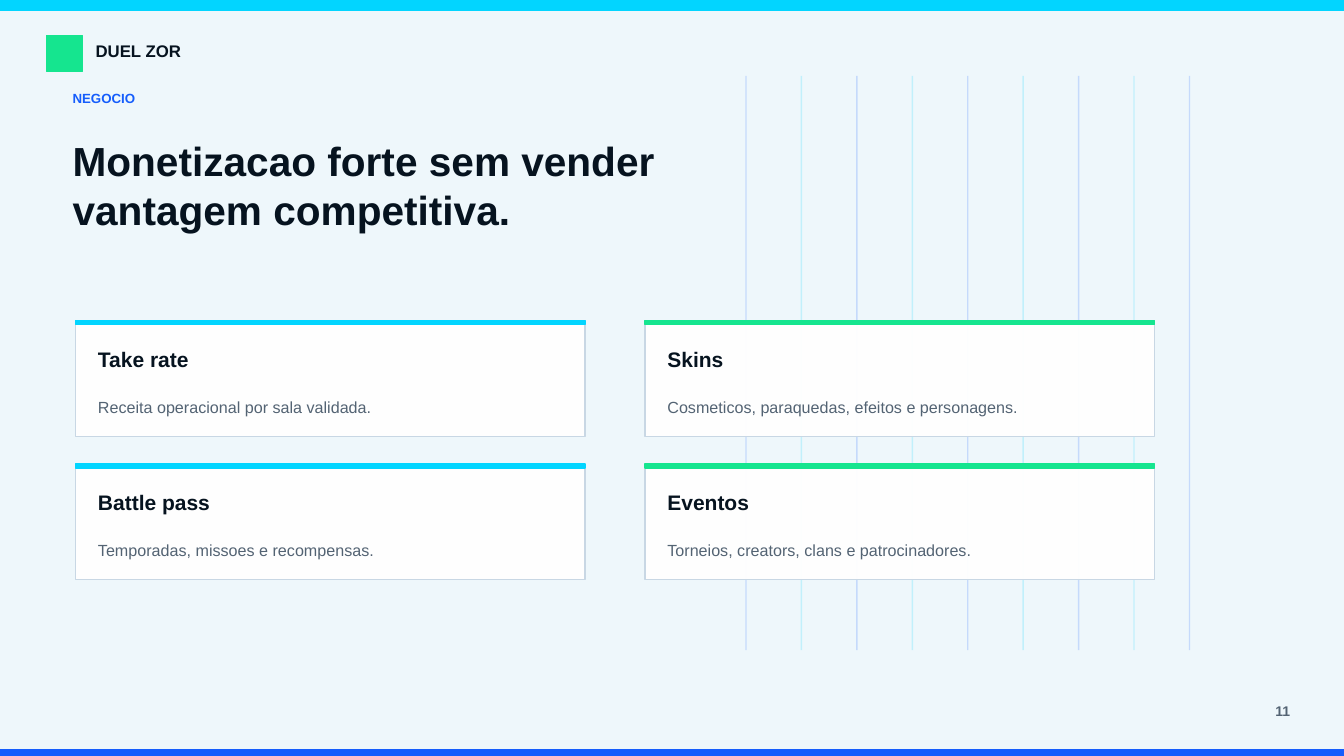
from lxml import etree
from pptx import Presentation
from pptx.dml.color import RGBColor
from pptx.enum.shapes import MSO_CONNECTOR, MSO_SHAPE
from pptx.enum.text import MSO_ANCHOR, PP_ALIGN
from pptx.oxml.ns import qn
from pptx.util import Cm, Pt

RECT = MSO_SHAPE.RECTANGLE
LINE = MSO_CONNECTOR.STRAIGHT
MIDDLE = MSO_ANCHOR.MIDDLE
LEFT, RIGHT = PP_ALIGN.LEFT, PP_ALIGN.RIGHT

COLORS = {
    "paper": "EEF7FB", "cyan": "02D5FF", "blue": "155DFC", "green": "15E58F",
    "ink": "06131F", "gray": "536373", "white": "FFFFFF", "edge": "C8D7E4",
}
COLORS = {name: RGBColor.from_string(code) for name, code in COLORS.items()}

deck = Presentation()
deck.slide_width, deck.slide_height = Cm(33.87), Cm(19.05)
slide = deck.slides.add_slide(deck.slide_layouts[6])
slide.background.fill.solid()
slide.background.fill.fore_color.rgb = COLORS["paper"]


def add_box(x, y, w, h, fill, edge):
    box = slide.shapes.add_shape(RECT, Cm(x), Cm(y), Cm(w), Cm(h))
    box.shadow.inherit = False
    box.fill.solid()
    box.fill.fore_color.rgb = COLORS[fill]
    box.line.color.rgb = COLORS[edge]
    box.line.width = Pt(1)
    return box


def add_text(text, x, y, w, h, size, color="ink", bold=True, align=LEFT):
    frame = slide.shapes.add_textbox(Cm(x), Cm(y), Cm(w), Cm(h)).text_frame
    frame.word_wrap = True
    frame.vertical_anchor = MIDDLE
    frame.margin_left = frame.margin_right = 0
    frame.margin_top = frame.margin_bottom = 0
    frame.text = text
    par = frame.paragraphs[0]
    par.alignment = align
    font = par.runs[0].font
    font.name, font.size, font.bold = "Arial", Pt(size), bold
    font.color.rgb = COLORS[color]


add_box(0, 0, 33.87, 0.25, "cyan", "cyan")
add_box(0, 18.9, 33.87, 0.15, "blue", "blue")

for i in range(9):
    x = Cm(18.8 + 1.397 * i)
    stripe = slide.shapes.add_connector(LINE, x, Cm(1.91), x, Cm(16.38))
    stripe.line.width = Pt(1)
    stripe.line.color.rgb = COLORS["cyan" if i % 2 else "blue"]
    props = stripe._element.spPr
    tint = props.find(".//" + qn("a:srgbClr"))
    etree.SubElement(tint, qn("a:alpha"), val="18000")
    etree.SubElement(props, qn("a:effectLst"))

add_box(1.17, 0.89, 0.91, 0.91, "green", "green")
add_text("DUEL ZOR", 2.41, 1.04, 4.32, 0.46, 12)
add_text("11", 31.19, 17.65, 1.32, 0.51, 10, "gray", align=RIGHT)
add_text("NEGOCIO", 1.83, 2.19, 8.89, 0.56, 9.5, "blue")
add_text("Monetizacao forte sem vender vantagem competitiva.",
         1.83, 3.13, 18.8, 3.05, 29)

CARDS = [
    ("Take rate", "Receita operacional por sala validada."),
    ("Skins", "Cosmeticos, paraquedas, efeitos e personagens."),
    ("Battle pass", "Temporadas, missoes e recompensas."),
    ("Eventos", "Torneios, creators, clans e patrocinadores."),
]
for i, (title, note) in enumerate(CARDS):
    row, col = divmod(i, 2)
    x, y = 1.91 + 14.35 * col, 8.08 + 3.61 * row
    accent = "green" if col else "cyan"
    card = add_box(x, y, 12.83, 2.92, "white", "edge")
    tint = card._element.spPr.find(qn("a:solidFill"))[0]
    etree.SubElement(tint, qn("a:alpha"), val="96000")
    add_box(x, y, 12.83, 0.1, accent, accent)
    add_text(title, x + 0.56, y + 0.58, 11.71, 0.76, 15)
    add_text(note, x + 0.56, y + 1.83, 11.71, 0.69, 11.5, "gray", False)

deck.save("out.pptx")
